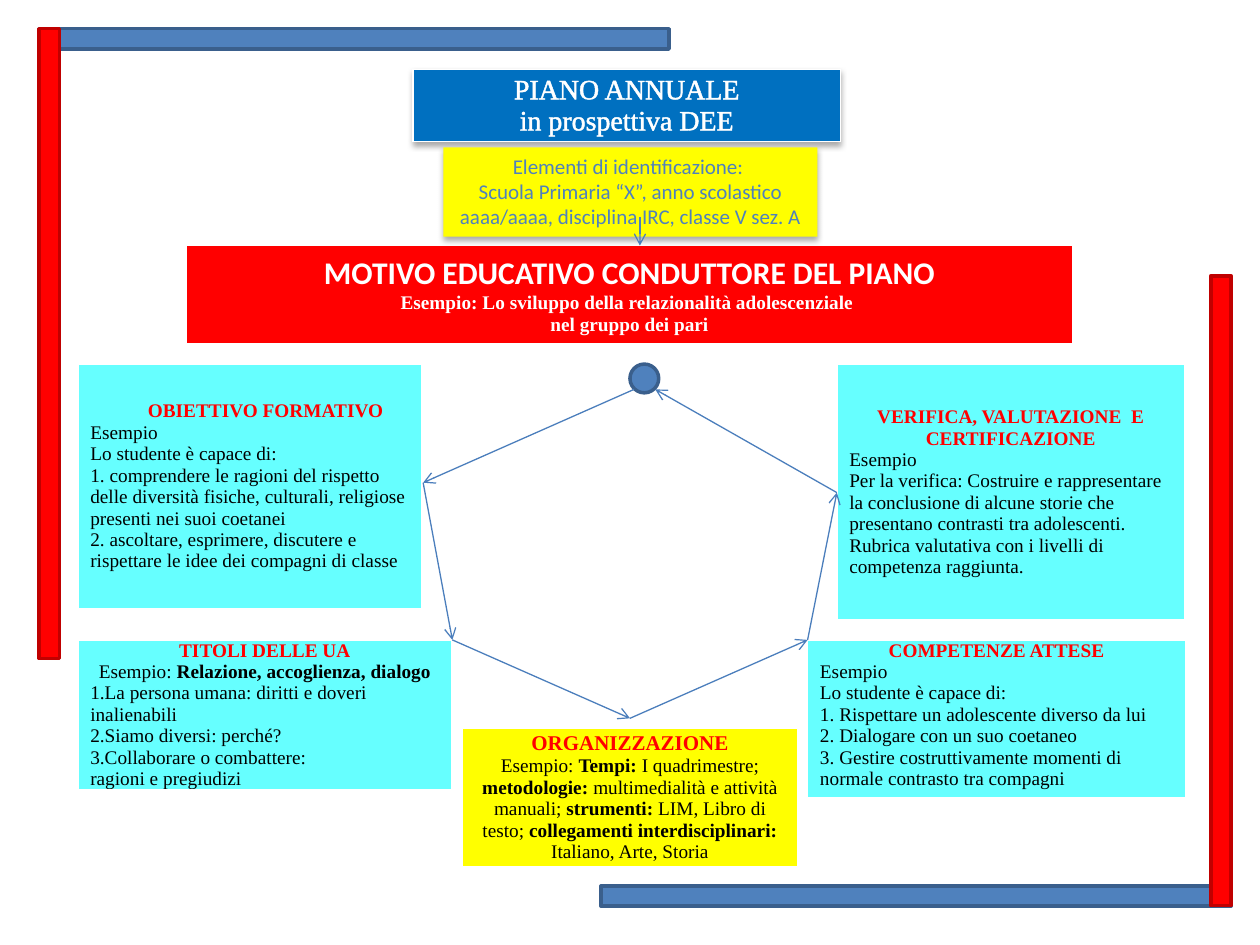
from dataclasses import dataclass
from itertools import pairwise

from lxml.etree import SubElement
from pptx import Presentation
from pptx.dml.color import RGBColor
from pptx.enum.shapes import MSO_CONNECTOR, MSO_SHAPE
from pptx.enum.text import MSO_ANCHOR, PP_ALIGN
from pptx.oxml.ns import qn
from pptx.util import Cm, Pt


@dataclass(frozen=True)
class Theme:
    """Colours, fonts and type sizes of the slide."""
    white: str = "FFFFFF"
    black: str = "000000"
    red: str = "FF0000"
    dark_red: str = "C00000"
    yellow: str = "FFFF00"
    cyan: str = "66FFFF"
    title_blue: str = "0070C0"
    blue: str = "4F81BD"
    dark_blue: str = "3A5F8C"
    arrow_blue: str = "4B7EBC"
    serif: str = "Times New Roman"
    sans: str = "Calibri"
    motive_size: int = 18
    title_size: int = 16
    large_size: int = 12
    body_size: int = 11


THEME = Theme()


@dataclass(frozen=True)
class Line:
    """One paragraph, in which asterisks enclose bold words."""
    text: str
    color: str = THEME.black
    size: int = THEME.body_size
    font: str = THEME.serif
    bold: bool = False
    align: PP_ALIGN = PP_ALIGN.LEFT
    indent: float = 0
    numbered: bool = False


def heading(text, color=THEME.red, size=THEME.body_size, **options):
    """Return a bold centred line."""
    return Line(text, color, size, bold=True, align=PP_ALIGN.CENTER, **options)


def set_fill(target, color):
    """Fill a cell or shape with one colour."""
    target.fill.solid()
    target.fill.fore_color.rgb = RGBColor.from_string(color)


def insert_first(parent, tag, **attributes):
    """Insert a new first child into an element and return it."""
    child = parent.makeelement(qn(tag), attributes)
    parent.insert(0, child)
    return child


def add_shadow(effects):
    """Add a soft downward shadow to an effect list."""
    shadow = SubElement(effects, qn("a:outerShdw"), blurRad=str(Pt(3.5)),
                        dist=str(Pt(2.2)), dir="5400000", rotWithShape="0")
    color = SubElement(shadow, qn("a:srgbClr"), val=THEME.black)
    SubElement(color, qn("a:alpha"), val="32000")


def write_lines(text_frame, lines):
    """Write the lines as paragraphs of a text frame."""
    text_frame.word_wrap = True
    for index, line in enumerate(lines):
        paragraph = text_frame.paragraphs[0] if index == 0 else text_frame.add_paragraph()
        paragraph.alignment = line.align
        properties = paragraph._p.get_or_add_pPr()
        if line.indent:
            properties.set("indent", str(Cm(line.indent)))
        if line.numbered:
            SubElement(properties, qn("a:buAutoNum"), type="arabicPeriod")
        font = paragraph.font
        font.name, font.size, font.bold = line.font, Pt(line.size), line.bold
        font.color.rgb = RGBColor.from_string(line.color)
        for position, words in enumerate(line.text.split("*")):
            for row, part in enumerate(words.split("\n")):
                if row:
                    paragraph.add_line_break()
                if part:
                    run = paragraph.add_run()
                    run.text = part
                    if position % 2:
                        run.font.bold = True


def add_panel(slide, box, color, lines, anchor=MSO_ANCHOR.MIDDLE, inset=0.25):
    """Add a one-cell table that fills the box and return it."""
    table = slide.shapes.add_table(1, 1, *map(Cm, box)).table
    table.first_row = table.horz_banding = False
    cell = table.cell(0, 0)
    set_fill(cell, color)
    cell.vertical_anchor = anchor
    cell.margin_left = cell.margin_right = Cm(inset)
    cell.margin_top = cell.margin_bottom = 0
    write_lines(cell.text_frame, lines)
    return table


def add_title(slide, box):
    """Add the shadowed title panel with outlined letters."""
    lines = [Line(text, THEME.white, THEME.title_size, align=PP_ALIGN.CENTER)
             for text in ("PIANO ANNUALE", "in prospettiva DEE")]
    table = add_panel(slide, box, THEME.title_blue, lines, inset=0.18)
    add_shadow(insert_first(table._tbl.tblPr, "a:effectLst"))
    for paragraph in table.cell(0, 0).text_frame.paragraphs:
        properties = paragraph.runs[0]._r.get_or_add_rPr()
        outline = insert_first(properties, "a:ln", w=str(Pt(1.45)))
        SubElement(SubElement(outline, qn("a:solidFill")), qn("a:srgbClr"), val=THEME.white)


def add_identification(slide, box):
    """Add the shadowed box that identifies the class."""
    shape = slide.shapes.add_textbox(*map(Cm, box))
    set_fill(shape, THEME.yellow)
    add_shadow(SubElement(shape._element.spPr, qn("a:effectLst")))
    texts = ("Elementi di identificazione: ",
             "Scuola Primaria “X”, anno scolastico aaaa/aaaa, disciplina IRC, classe V sez. A")
    write_lines(shape.text_frame, [
        Line(text, THEME.blue, THEME.large_size, THEME.sans, align=PP_ALIGN.CENTER)
        for text in texts])


def add_outlined(slide, box, fill, line, kind=MSO_SHAPE.RECTANGLE):
    """Add a filled shape with a darker outline."""
    shape = slide.shapes.add_shape(kind, *map(Cm, box))
    shape.shadow.inherit = False
    set_fill(shape, fill)
    shape.line.color.rgb = RGBColor.from_string(line)
    shape.line.width = Pt(2)


def add_arrow(slide, start, end):
    """Add a thin arrow between two points."""
    arrow = slide.shapes.add_connector(MSO_CONNECTOR.STRAIGHT, *map(Cm, (*start, *end)))
    arrow.line.color.rgb = RGBColor.from_string(THEME.arrow_blue)
    arrow.line.width = Pt(0.75)
    properties = arrow._element.spPr
    SubElement(properties.find(qn("a:ln")), qn("a:tailEnd"), type="arrow")
    SubElement(properties, qn("a:effectLst"))


def add_panels(slide):
    """Add the guiding motive and the five stages of the plan."""
    add_panel(slide, (3.76, 4.95, 17.86, 1.98), THEME.red, [
        heading("MOTIVO EDUCATIVO CONDUTTORE DEL PIANO", THEME.white,
                THEME.motive_size, font=THEME.sans),
        heading("Esempio: Lo sviluppo della relazionalità adolescenziale \nnel gruppo dei pari",
                THEME.white)], inset=0.13)
    add_panel(slide, (1.57, 7.34, 6.93, 4.93), THEME.cyan, [
        heading("OBIETTIVO FORMATIVO", indent=0.64),
        Line("Esempio"),
        Line("Lo studente è capace di:"),
        Line("1. comprendere le ragioni del rispetto delle diversità fisiche, culturali, "
             "religiose presenti nei suoi coetanei"),
        Line("2. ascoltare, esprimere, discutere e rispettare le idee dei compagni di classe")])
    add_panel(slide, (1.57, 12.9, 7.54, 2.74), THEME.cyan, [
        heading("TITOLI DELLE UA"),
        Line("Esempio: *Relazione, accoglienza, dialogo*", align=PP_ALIGN.CENTER),
        Line("La persona umana: diritti e doveri inalienabili", numbered=True),
        Line("Siamo diversi: perché?", numbered=True),
        Line("Collaborare o combattere: \nragioni e pregiudizi", numbered=True)],
        MSO_ANCHOR.TOP)
    add_panel(slide, (9.32, 14.68, 6.76, 2.79), THEME.yellow, [
        heading("ORGANIZZAZIONE", size=THEME.large_size),
        Line("Esempio: *Tempi:* I quadrimestre; *metodologie: *multimedialità e attività "
             "manuali; *strumenti:* LIM, Libro di testo; *collegamenti interdisciplinari: *"
             "Italiano, Arte, Storia", align=PP_ALIGN.CENTER)])
    add_panel(slide, (16.28, 12.9, 7.62, 3.18), THEME.cyan, [
        heading("COMPETENZE ATTESE"),
        Line("Esempio"),
        Line("Lo studente è capace di: ", align=PP_ALIGN.JUSTIFY),
        Line("1. Rispettare un adolescente diverso da lui"),
        Line("2. Dialogare con un suo coetaneo"),
        Line("3. Gestire costruttivamente momenti di normale contrasto tra compagni")],
        MSO_ANCHOR.TOP)
    add_panel(slide, (16.87, 7.34, 7.01, 5.16), THEME.cyan, [
        heading("VERIFICA, VALUTAZIONE  E CERTIFICAZIONE"),
        Line("Esempio"),
        Line("Per la verifica: Costruire e rappresentare la conclusione di alcune storie "
             "che presentano contrasti tra adolescenti."),
        Line("Rubrica valutativa con i livelli di competenza raggiunta.")])


def add_cycle(slide):
    """Add the dot and the ring of arrows that joins the stages."""
    add_outlined(slide, (12.7, 7.34, 0.58, 0.58), THEME.blue, THEME.dark_blue, MSO_SHAPE.OVAL)
    stops = [(12.78, 7.85), (8.53, 9.73), (9.12, 12.9), (12.7, 14.48),
             (16.28, 12.9), (16.87, 9.93), (13.21, 7.85)]
    for start, end in pairwise(stops):
        add_arrow(slide, start, end)


def add_frame(slide, length=12.7, thickness=0.41):
    """Add the coloured bars at two opposite corners."""
    for left, top in ((0.79, 0.58), (12.12, 17.86)):
        add_outlined(slide, (left, top, length, thickness), THEME.blue, THEME.dark_blue)
    for left, top in ((0.79, 0.58), (24.41, 5.56)):
        add_outlined(slide, (left, top, thickness, length), THEME.red, THEME.dark_red)


def main():
    """Build the slide and save it."""
    presentation = Presentation()
    presentation.slide_width, presentation.slide_height = Cm(25.4), Cm(19.05)
    slide = presentation.slides.add_slide(presentation.slide_layouts[6])
    add_title(slide, (8.33, 1.4, 8.61, 1.45))
    add_panels(slide)
    add_identification(slide, (8.94, 2.97, 7.54, 1.8))
    add_frame(slide)
    add_arrow(slide, (12.9, 4.37), (12.9, 4.95))
    add_cycle(slide)
    presentation.save("out.pptx")


if __name__ == "__main__":
    main()
